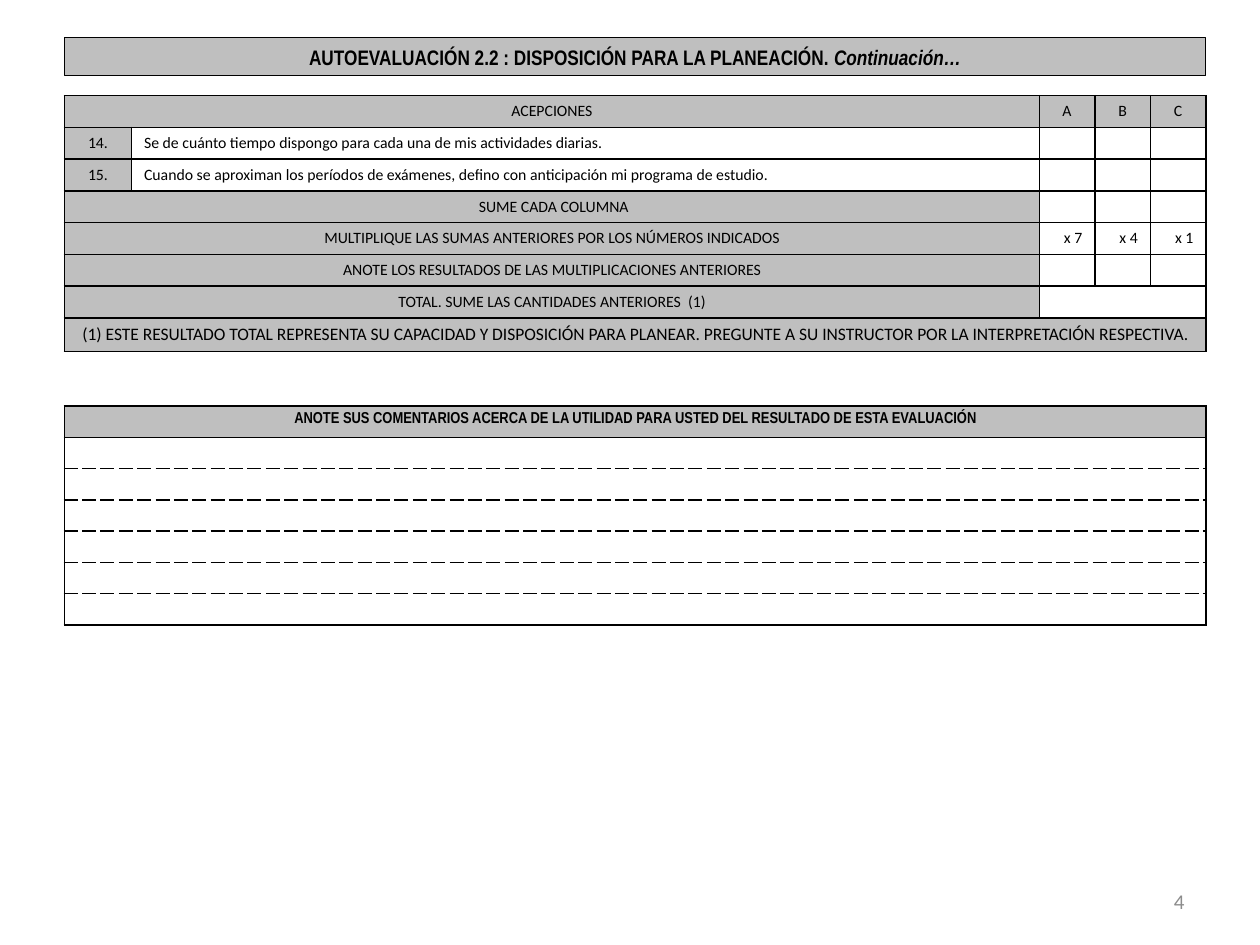
from dataclasses import dataclass

from pptx import Presentation
from pptx import util as u
from pptx.dml.color import RGBColor
from pptx.enum import shapes, text
from pptx.oxml.xmlchemy import OxmlElement

BLACK = RGBColor(0x00, 0x00, 0x00)
WHITE = RGBColor(0xFF, 0xFF, 0xFF)
HEADER_GRAY = RGBColor(0xBF, 0xBF, 0xBF)
NUMBER_GRAY = RGBColor(0x8C, 0x8C, 0x8C)

LEFT, WIDTH = u.Cm(1.3), u.Cm(23.01)
CENTER, RIGHT, JUSTIFY = text.PP_ALIGN.CENTER, text.PP_ALIGN.RIGHT, text.PP_ALIGN.JUSTIFY
MIDDLE, TOP = text.MSO_ANCHOR.MIDDLE, text.MSO_ANCHOR.TOP
SOLID, DASHED = "solid", "sysDash"


@dataclass
class Entry:
    """Content and look of one table cell."""
    words: str = ""
    fill: RGBColor | None = None
    align: text.PP_ALIGN = CENTER
    anchor: text.MSO_ANCHOR = MIDDLE
    span: int = 1
    size: float = 9
    font: str = "Calibri"
    bold: bool = False
    top: str = SOLID
    bottom: str = SOLID


def add_run(paragraph, words: str, size: float, font: str, color: RGBColor = BLACK,
            bold: bool = False, italic: bool = False) -> None:
    run = paragraph.add_run()
    run.text = words
    run.font.size, run.font.name = u.Pt(size), font
    run.font.bold, run.font.italic = bold, italic
    run.font.color.rgb = color


def set_borders(cell, top: str, bottom: str) -> None:
    properties = cell._tc.get_or_add_tcPr()
    for side, dash in (("L", SOLID), ("R", SOLID), ("T", top), ("B", bottom)):
        line = OxmlElement(f"a:ln{side}")
        line.set("w", str(u.Pt(1)))
        fill, color = OxmlElement("a:solidFill"), OxmlElement("a:srgbClr")
        color.set("val", str(BLACK))
        fill.append(color)
        preset = OxmlElement("a:prstDash")
        preset.set("val", dash)
        line.extend([fill, preset])
        properties.append(line)


def style_cell(cell, entry: Entry) -> None:
    set_borders(cell, entry.top, entry.bottom)
    if entry.fill is None:
        cell.fill.background()
    else:
        cell.fill.solid()
        cell.fill.fore_color.rgb = entry.fill
    cell.vertical_anchor = entry.anchor
    paragraph = cell.text_frame.paragraphs[0]
    paragraph.alignment = entry.align
    if entry.words:
        add_run(paragraph, entry.words, entry.size, entry.font, bold=entry.bold)
    else:
        # Keeps empty rows as low as the written ones
        ending = OxmlElement("a:endParaRPr")
        ending.set("sz", str(int(entry.size * 100)))
        paragraph._p.append(ending)


def draw_table(slide, top: u.Cm, columns: list[float], heights: list[float],
               rows: list[list[Entry]]) -> None:
    frame = slide.shapes.add_table(len(rows), len(columns), LEFT, top, WIDTH, u.Cm(sum(heights)))
    table = frame.table
    table.first_row = table.horz_banding = False
    for column, width in zip(table.columns, columns):
        column.width = u.Cm(width)
    for i, (height, entries) in enumerate(zip(heights, rows)):
        table.rows[i].height = u.Cm(height)
        j = 0
        for entry in entries:
            style_cell(table.cell(i, j), entry)
            for hidden in range(j + 1, j + entry.span):
                style_cell(table.cell(i, hidden), Entry(fill=entry.fill))
            if entry.span > 1:
                table.cell(i, j).merge(table.cell(i, j + entry.span - 1))
            j += entry.span


def gray(words: str, span: int = 1, size: float = 9) -> Entry:
    return Entry(words, HEADER_GRAY, span=span, size=size)


def question(number: str, words: str) -> list[Entry]:
    return [gray(number), Entry(words, align=JUSTIFY)] + blanks()


def blanks() -> list[Entry]:
    return [Entry() for _ in range(3)]


def main() -> None:
    presentation = Presentation()
    presentation.slide_width, presentation.slide_height = u.Cm(25.4), u.Cm(19.05)
    slide = presentation.slides.add_slide(presentation.slide_layouts[6])

    # Page number
    box = slide.shapes.add_textbox(u.Cm(18.2), u.Cm(17.66), u.Cm(5.93), u.Cm(1.01))
    box.text_frame.word_wrap = True
    box.text_frame.vertical_anchor = MIDDLE
    paragraph = box.text_frame.paragraphs[0]
    paragraph.alignment = RIGHT
    add_run(paragraph, "4", 12, "Calibri", NUMBER_GRAY)

    # Self-evaluation table
    factors = [Entry(f"x {n}", align=RIGHT, anchor=TOP) for n in (7, 4, 1)]
    evaluation = [
        [gray("ACEPCIONES", 2)] + [gray(letter) for letter in "ABC"],
        question("14.", "Se de cuánto tiempo dispongo para cada una de mis actividades diarias."),
        question("15.", "Cuando se aproximan los períodos de exámenes, defino con "
                        "anticipación mi programa de estudio."),
        [gray(" SUME CADA COLUMNA", 2)] + blanks(),
        [gray("MULTIPLIQUE LAS SUMAS ANTERIORES POR LOS NÚMEROS INDICADOS", 2)] + factors,
        [gray("ANOTE LOS RESULTADOS DE LAS MULTIPLICACIONES ANTERIORES", 2)] + blanks(),
        [gray("TOTAL. SUME LAS CANTIDADES ANTERIORES  (1)", 2), Entry(span=3)],
        [gray("(1) ESTE RESULTADO TOTAL REPRESENTA SU CAPACIDAD Y DISPOSICIÓN PARA PLANEAR. "
              "PREGUNTE A SU INSTRUCTOR POR LA INTERPRETACIÓN RESPECTIVA.", 5, 10)],
    ]
    draw_table(slide, u.Cm(1.93), [1.35, 18.3] + [1.12] * 3, [0.64] * 7 + [0.68], evaluation)

    # Title bar
    title = slide.shapes.add_shape(shapes.MSO_SHAPE.RECTANGLE, LEFT, u.Cm(0.76), WIDTH, u.Cm(0.77))
    title.shadow.inherit = False
    title.fill.solid()
    title.fill.fore_color.rgb = HEADER_GRAY
    title.line.color.rgb = BLACK
    title.line.width = u.Pt(0.75)
    title.text_frame.word_wrap = True
    title.text_frame.vertical_anchor = MIDDLE
    paragraph = title.text_frame.paragraphs[0]
    paragraph.alignment = CENTER
    add_run(paragraph, "AUTOEVALUACIÓN 2.2 : DISPOSICIÓN PARA LA PLANEACIÓN. ", 12,
            "Arial Narrow", bold=True)
    add_run(paragraph, "Continuación…", 12, "Arial Narrow", bold=True, italic=True)

    # Comments table with dashed writing lines
    heading = Entry("ANOTE SUS COMENTARIOS ACERCA DE LA UTILIDAD PARA USTED DEL RESULTADO "
                    "DE ESTA EVALUACIÓN", HEADER_GRAY, anchor=TOP, font="Arial Narrow", bold=True)
    line_count = 6
    lines = [[Entry(fill=WHITE, size=8,
                    top=SOLID if i == 0 else DASHED,
                    bottom=SOLID if i == line_count - 1 else DASHED)]
             for i in range(line_count)]
    draw_table(slide, u.Cm(8.18), [23.01], [0.63] * (line_count + 1), [[heading]] + lines)

    presentation.save("out.pptx")


if __name__ == "__main__":
    main()
